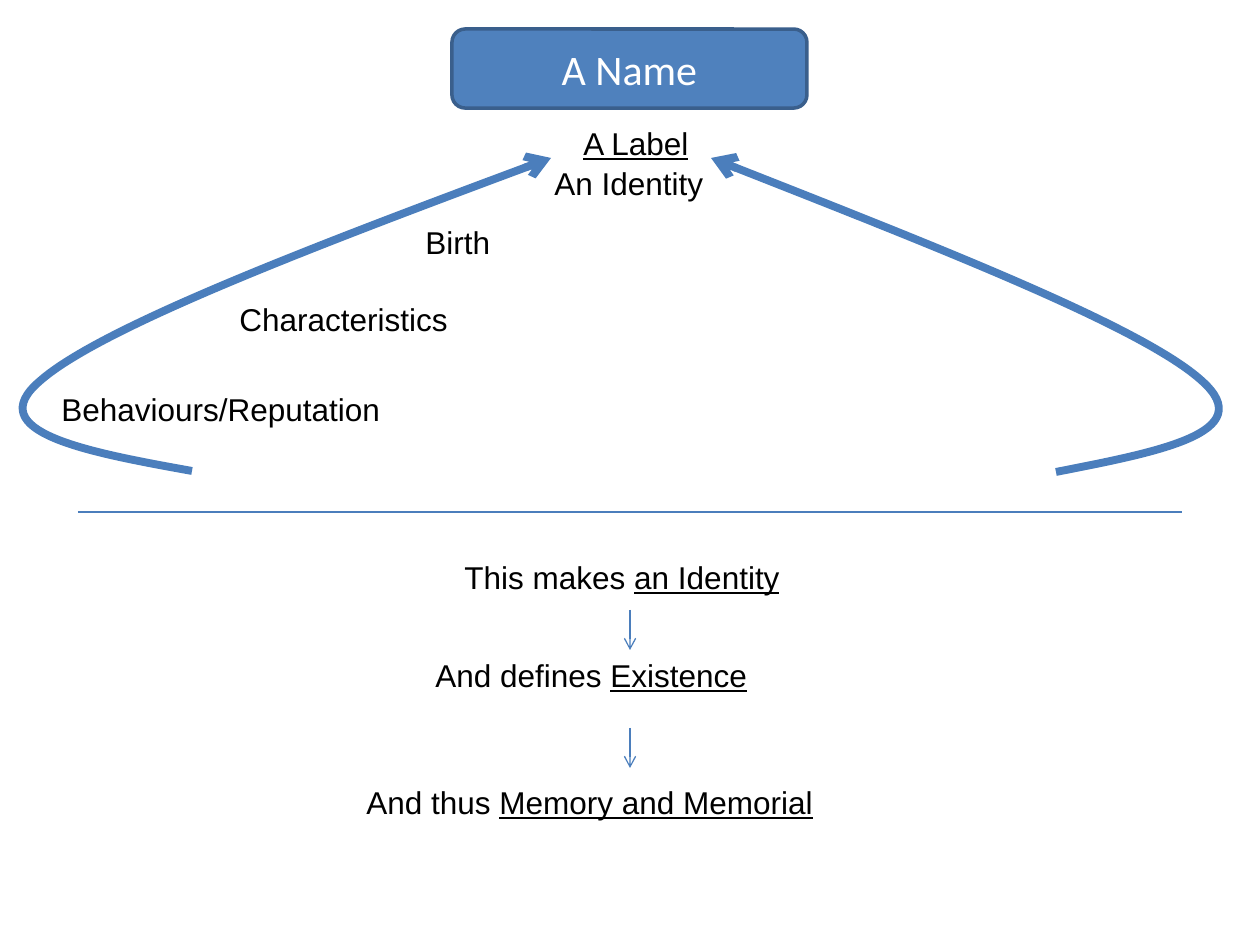
"""Build a slide showing how a name leads to identity, existence and memory."""
from lxml.etree import SubElement
from pptx import Presentation
from pptx.dml.color import RGBColor
from pptx.enum.shapes import MSO_CONNECTOR, MSO_SHAPE
from pptx.enum.text import MSO_ANCHOR, PP_ALIGN
from pptx.oxml.ns import qn
from pptx.util import Pt

PX = 914400 / 126
THEME = {
    "fill": RGBColor(0x4F, 0x81, 0xBD),
    "border": RGBColor(0x3A, 0x5F, 0x8C),
    "line": RGBColor(0x4B, 0x7E, 0xBC),
    "white": RGBColor(0xFF, 0xFF, 0xFF),
    "black": RGBColor(0, 0, 0),
    "title_font": "Calibri",
    "body_font": "Arial",
    "title_size": Pt(24),
    "body_size": Pt(18),
}


def px(*values):
    return [round(v * PX) for v in values]


def style_line(sp, width, arrow):
    sp.line.color.rgb = THEME["line"]
    sp.line.width = Pt(width)
    if arrow:
        SubElement(sp.line._get_or_add_ln(), qn("a:tailEnd"), type="arrow")


prs = Presentation()
prs.slide_width, prs.slide_height = px(1260, 945)
s = prs.slides.add_slide(prs.slide_layouts[6])

title = s.shapes.add_shape(MSO_SHAPE.ROUNDED_RECTANGLE, *px(452, 29, 355, 79))
title.shadow.inherit = False
title.fill.solid()
title.fill.fore_color.rgb = THEME["fill"]
title.line.color.rgb = THEME["border"]
title.line.width = Pt(2)
tf = title.text_frame
tf.text = "A Name"
tf.vertical_anchor = MSO_ANCHOR.MIDDLE
p = tf.paragraphs[0]
p.alignment = PP_ALIGN.CENTER
font = p.runs[0].font
font.name, font.size = THEME["title_font"], THEME["title_size"]
font.color.rgb = THEME["white"]

labels = [
    (571, 118, 131, "", "A Label"),
    (542, 158, 175, "An Identity", ""),
    (413, 217, 91, "Birth", ""),
    (227, 294, 236, "Characteristics", ""),
    (49, 384, 347, "Behaviours/Reputation", ""),
    (452, 552, 344, "This makes ", "an Identity"),
    (423, 650, 340, "And defines ", "Existence"),
    (354, 777, 476, "And thus ", "Memory and Memorial"),
]
for left, top, width, plain, underlined in labels:
    tf = s.shapes.add_textbox(*px(left, top, width, 50)).text_frame
    tf.word_wrap = False
    p = tf.paragraphs[0]
    for text, underline in ((plain, False), (underlined, True)):
        if text:
            r = p.add_run()
            r.text = text
            r.font.name, r.font.size = THEME["body_font"], THEME["body_size"]
            r.font.color.rgb = THEME["black"]
            r.font.underline = underline

lines = [
    (78, 512, 1182, 512, False),
    (630, 610, 630, 650, True),
    (630, 728, 630, 768, True),
]
for x1, y1, x2, y2, arrow in lines:
    sp = s.shapes.add_connector(MSO_CONNECTOR.STRAIGHT, *px(x1, y1, x2, y2))
    style_line(sp, 0.75, arrow)
    SubElement(sp._element.spPr, qn("a:effectLst"))

curves = [
    [(192, 471), (86, 452), (-20, 432), (40, 381), (100, 328), (325, 242), (551, 158)],
    [(1056, 472), (1158, 452), (1260, 433), (1202, 381), (1144, 328), (927, 243), (711, 158)],
]
for points in curves:
    builder = s.shapes.build_freeform(*points[0], scale=PX)
    builder.add_line_segments(points[1:], close=False)
    sp = builder.convert_to_shape()
    sp.shadow.inherit = False
    sp.fill.background()
    style_line(sp, 4.5, True)
    segments = list(sp._element.iter(qn("a:lnTo")))
    outline = segments[0].getparent()
    for i in range(0, len(segments), 3):
        bezier = SubElement(outline, qn("a:cubicBezTo"))
        for segment in segments[i:i + 3]:
            bezier.append(segment[0])
            outline.remove(segment)

prs.save("out.pptx")
